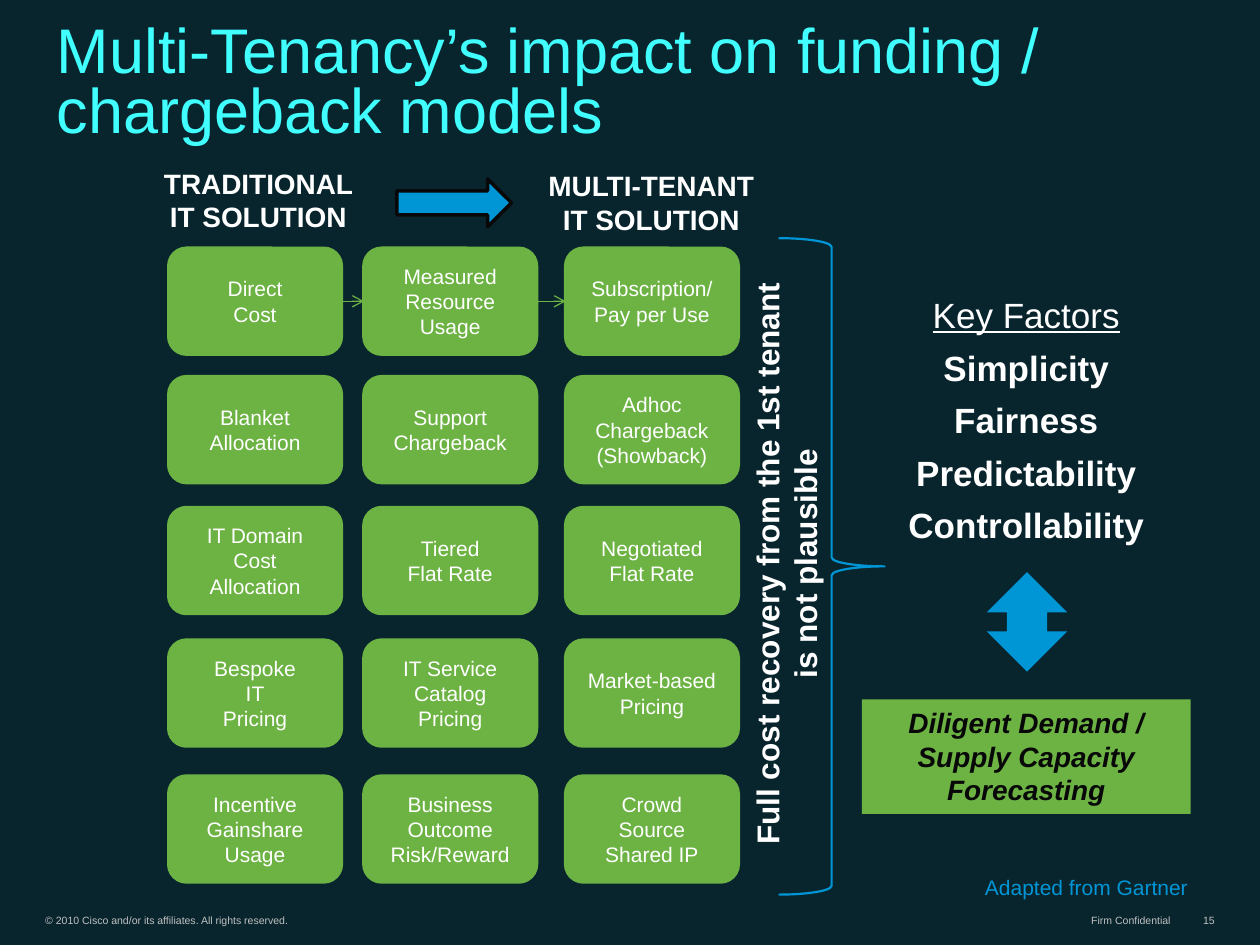
from copy import deepcopy

from lxml import etree
from pptx import Presentation
from pptx.dml.color import RGBColor
from pptx.enum.shapes import MSO_CONNECTOR, MSO_SHAPE
from pptx.enum.text import MSO_ANCHOR, MSO_AUTO_SIZE, PP_ALIGN
from pptx.oxml.ns import qn
from pptx.util import Pt

LEFT, CENTER, RIGHT = PP_ALIGN.LEFT, PP_ALIGN.CENTER, PP_ALIGN.RIGHT
TOP, MIDDLE, BOTTOM = MSO_ANCHOR.TOP, MSO_ANCHOR.MIDDLE, MSO_ANCHOR.BOTTOM
BG, CYAN, BLUE, GREEN = "08252E", "40FFFE", "0096D6", "6DB344"
WHITE, BLACK, GREY = "FFFFFF", "080808", "C0C0C0"

TITLE = "Multi-Tenancy’s impact on funding / chargeback models"
MODELS = [
    ["Direct\nCost", "Measured\nResource\nUsage", "Subscription/\nPay per Use"],
    ["Blanket\nAllocation", "Support\nChargeback", "Adhoc\nChargeback\n(Showback)"],
    ["IT Domain\nCost\nAllocation", "Tiered\nFlat Rate", "Negotiated\nFlat Rate"],
    ["Bespoke\nIT\nPricing", "IT Service\nCatalog\nPricing", "Market-based\nPricing"],
    ["Incentive\nGainshare\nUsage", "Business\nOutcome\nRisk/Reward", "Crowd\nSource Shared IP"],
]
COLS = [96.5, 208, 323.3]
ROWS = [141.9, 215.3, 290.1, 365.8, 443.5]
CELL_W, CELL_H = 98.6, 60.5

HEADINGS = [
    ("TRADITIONAL IT SOLUTION", (85, 91.4, 125.3, 46.1)),
    ("MULTI-TENANT IT SOLUTION", (303.8, 92.9, 136.8, 46.1)),
]
FACTORS = ["Key Factors", "Simplicity", "Fairness", "Predictability", "Controllability"]
RECOVERY = ["Full cost recovery from the 1st tenant", "is not plausible"]
FOOTERS = [
    ("© 2010 Cisco and/or its affiliates. All rights reserved.", (19.4, 518.4, 269.3, 13.7), LEFT),
    ("Firm Confidential", (611.3, 518.4, 64.1, 13.7), RIGHT),
    ("15", (680.4, 518.4, 20.2, 13.7), RIGHT),
]


def rgb(value):
    return RGBColor.from_string(value)


def write(shape, paragraphs, size, color, align=LEFT, anchor=TOP, after=0, wrap=True, **fmt):
    tf = shape.text_frame
    tf.auto_size = MSO_AUTO_SIZE.NONE
    tf.word_wrap, tf.vertical_anchor = wrap, anchor
    for i, text in enumerate(paragraphs):
        p = tf.add_paragraph() if i else tf.paragraphs[0]
        p.text = text
        p.alignment, p.space_before, p.space_after = align, Pt(0), Pt(after)
        for r in p.runs:
            for name, value in {"name": "Arial", "size": Pt(size), **fmt}.items():
                setattr(r.font, name, value)
            r.font.color.rgb = rgb(color)
        for br in p._p.findall(qn("a:br")):
            br.append(deepcopy(p.runs[0]._r.rPr))
    return tf


def add_text(s, box, paragraphs, size, color, **fmt):
    shape = s.shapes.add_textbox(*map(Pt, box))
    write(shape, paragraphs, size, color, **fmt)
    return shape


def add_shape(s, kind, box, fill=None, line=None, width=1):
    shape = s.shapes.add_shape(kind, *map(Pt, box))
    shape.shadow.inherit = False
    if fill:
        shape.fill.solid()
        shape.fill.fore_color.rgb = rgb(fill)
    else:
        shape.fill.background()
    if line:
        shape.line.color.rgb = rgb(line)
        shape.line.width = Pt(width)
    else:
        shape.line.fill.background()
    return shape


def add_arrow(s, start, end):
    line = s.shapes.add_connector(MSO_CONNECTOR.STRAIGHT, 0, 0, 0, 0)
    line.begin_connect(start, 3)
    line.end_connect(end, 1)
    line.line.color.rgb = rgb(GREEN)
    line.line.width = Pt(0.75)
    etree.SubElement(line.line._get_or_add_ln(), qn("a:tailEnd"), type="arrow")
    etree.SubElement(line._element.spPr, qn("a:effectLst"))


def main():
    prs = Presentation()
    prs.slide_width, prs.slide_height = Pt(720), Pt(540)
    s = prs.slides.add_slide(prs.slide_layouts[5])
    s.background.fill.solid()
    s.background.fill.fore_color.rgb = rgb(BG)

    title = s.shapes.title
    title.left, title.top, title.width, title.height = map(Pt, (25.2, 40.3, 669.6, 46.8))
    write(title, [TITLE], 36, CYAN, anchor=BOTTOM).paragraphs[0].line_spacing = 0.8

    for text, box, align in FOOTERS:
        tf = add_text(s, box, [text], 6, GREY, align=align, anchor=BOTTOM).text_frame
        tf.margin_left = tf.margin_right = Pt(6.5)
        tf.margin_top = tf.margin_bottom = Pt(2.9)

    for text, box in HEADINGS:
        add_text(s, box, [text], 16, WHITE, align=CENTER, after=6, bold=True)
    add_shape(s, MSO_SHAPE.RIGHT_ARROW, (226.8, 102.2, 65.5, 27.4), BLUE, BLACK, 2)

    for top, labels in zip(ROWS, MODELS):
        cells = []
        for left, label in zip(COLS, labels):
            cell = add_shape(s, MSO_SHAPE.ROUNDED_RECTANGLE,
                             (left, top, CELL_W, CELL_H), GREEN, GREEN, 2)
            write(cell, [label], 12, WHITE, align=CENTER, anchor=MIDDLE)
            cells.append(cell)
        if top == ROWS[0]:
            for start, end in zip(cells, cells[1:]):
                add_arrow(s, start, end)

    recovery = add_text(s, (269.3, 296.6, 360, 51.1), RECOVERY, 18, WHITE,
                        align=CENTER, bold=True)
    recovery.rotation = 270
    add_shape(s, MSO_SHAPE.RIGHT_BRACE, (445, 136.1, 60.5, 375.1), None, BLUE, 1.25)

    factors = add_text(s, (511.2, 164.2, 150.5, 152.6), FACTORS, 20, WHITE,
                       align=CENTER, after=6, wrap=False, bold=True)
    heading = factors.text_frame.paragraphs[0].runs[0].font
    heading.bold, heading.underline = False, True
    add_shape(s, MSO_SHAPE.UP_DOWN_ARROW, (563.8, 326.9, 46.1, 56.9), BLUE)
    forecast = add_shape(s, MSO_SHAPE.RECTANGLE, (492.5, 399.6, 187.9, 65.5), GREEN)
    write(forecast, ["Diligent Demand / Supply Capacity Forecasting"], 16, BLACK,
          align=CENTER, after=6, bold=True, italic=True)
    add_text(s, (555.8, 496.1, 139.7, 21.6), ["Adapted from Gartner"], 12, BLUE, after=6)

    prs.save("out.pptx")


if __name__ == "__main__":
    main()
